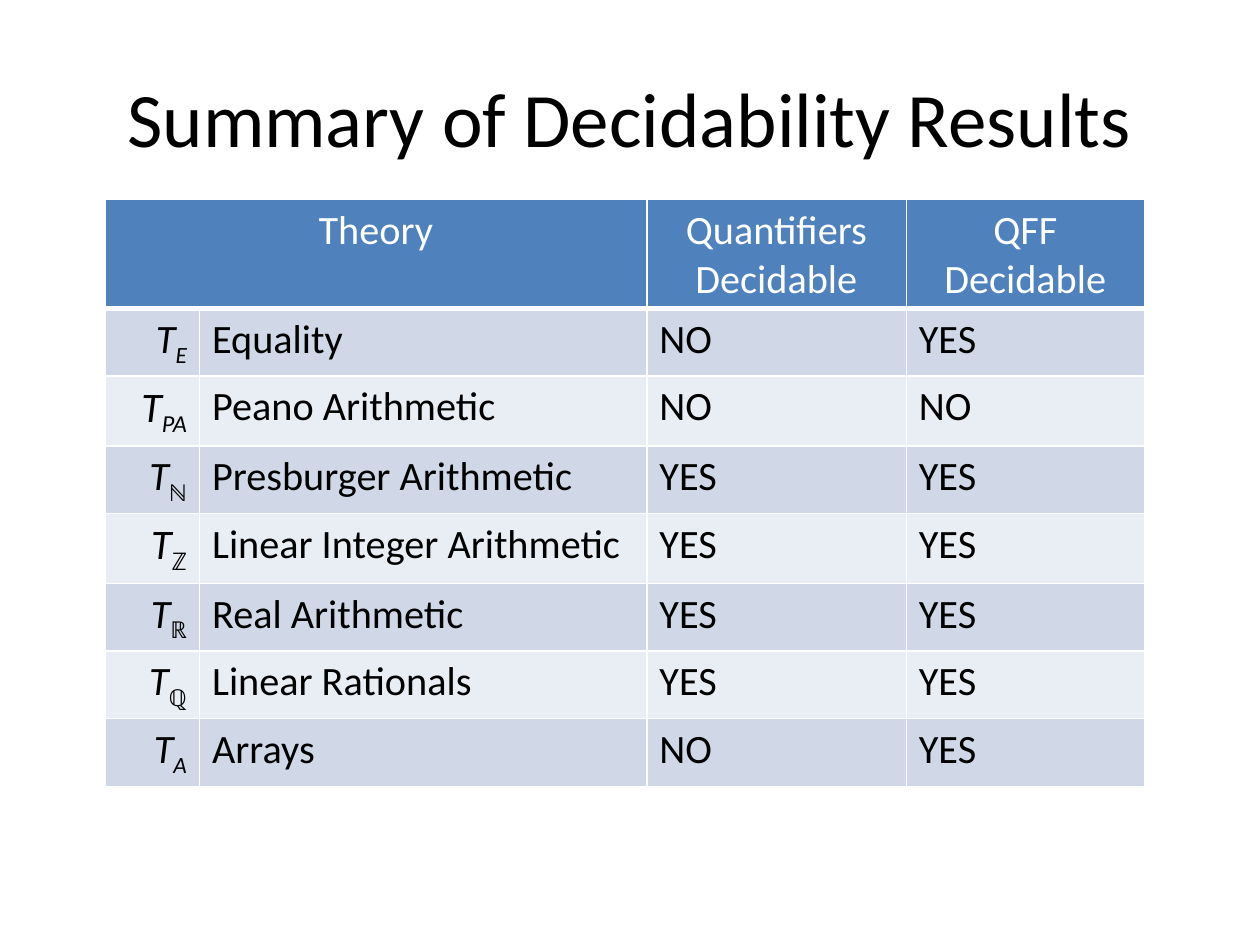
from lxml import etree
from pptx import Presentation, util as u
from pptx.dml.color import RGBColor
from pptx.enum import text
from pptx.oxml import ns

TITLE = "Summary of Decidability Results"
HEADINGS = ["Theory", None, "Quantifiers Decidable", "QFF Decidable"]
THEORIES = [
    ("E", True, 23, "Equality", "NO", "YES"),
    ("PA", True, 24, "Peano Arithmetic", "NO", "NO"),
    ("ℕ", False, 23, "Presburger Arithmetic", "YES", "YES"),
    ("ℤ", False, 24, "Linear Integer Arithmetic", "YES", "YES"),
    ("ℝ", False, 23, "Real Arithmetic", "YES", "YES"),
    ("ℚ", False, 23, "Linear Rationals", "YES", "YES"),
    ("A", True, 23, "Arrays", "NO", "YES"),
]
COLUMN_WIDTHS = [54, 255.6, 148.3, 136.1]
ROW_HEIGHT = 29.5


def colour(value):
    return RGBColor.from_string(value)


class SlideBuilder:
    """Holds the deck style and the current slide, and adds each kind of element."""

    font = "Calibri"
    ink, paper, header = "000000", "FFFFFF", "4F81BD"
    bands = ["D0D8E8", "E9EDF4"]
    body_size = 23

    def __init__(self, page):
        self.page = page

    def style(self, para, size, ink, align):
        para.alignment = align
        para.font.name = self.font
        para.font.size = u.Pt(size)
        para.font.bold = False
        para.font.color.rgb = colour(ink)

    def title(self, words, left, top, width, height):
        box = self.page.shapes.add_textbox(*map(u.Pt, (left, top, width, height)))
        frame = box.text_frame
        frame.word_wrap = True
        frame.vertical_anchor = text.MSO_ANCHOR.MIDDLE
        para = frame.paragraphs[0]
        para.text = words
        self.style(para, 44, self.ink, text.PP_ALIGN.CENTER)

    def table(self, left, top, widths, row_count):
        size = (left, top, sum(widths), ROW_HEIGHT * row_count)
        table = self.page.shapes.add_table(
            row_count, len(widths), *map(u.Pt, size)).table
        for column, width in zip(table.columns, widths):
            column.width = u.Pt(width)
        for row in table.rows:
            row.height = u.Pt(ROW_HEIGHT)
        return table

    def borders(self, cell, sides):
        properties = cell._tc.get_or_add_tcPr()
        for side, width in sides.items():
            line = etree.SubElement(properties, ns.qn(f"a:ln{side}"), w=str(u.Pt(width)))
            fill = etree.SubElement(line, ns.qn("a:solidFill"))
            etree.SubElement(fill, ns.qn("a:srgbClr"), val=self.paper)

    def cell(self, cell, words, fill, ink, align=text.PP_ALIGN.LEFT):
        cell.fill.solid()
        cell.fill.fore_color.rgb = colour(fill)
        para = cell.text_frame.paragraphs[0]
        para.text = words
        self.style(para, self.body_size, ink, align)

    def heading(self, cell, words):
        self.borders(cell, {"L": 1, "R": 1, "T": 1, "B": 3})
        self.cell(cell, words, self.header, self.paper, text.PP_ALIGN.CENTER)

    def symbol(self, cell, subscript, italic, size, fill):
        self.cell(cell, "T", fill, self.ink, text.PP_ALIGN.RIGHT)
        para = cell.text_frame.paragraphs[0]
        para.font.size = u.Pt(size)
        para.runs[0].font.italic = True
        span = para.add_run()
        span.text = subscript
        span.font.italic = italic
        span.font._element.set("baseline", "-25000")


def main():
    deck = Presentation()
    deck.slide_width, deck.slide_height = u.Pt(720), u.Pt(540)
    builder = SlideBuilder(deck.slides.add_slide(deck.slide_layouts[6]))
    builder.title(TITLE, 36, 21.6, 648, 90)

    table = builder.table(60, 114, COLUMN_WIDTHS, len(THEORIES) + 1)
    table.cell(0, 0).merge(table.cell(0, 1))
    for column, words in enumerate(HEADINGS):
        if words:
            builder.heading(table.cell(0, column), words)
    for row, (subscript, italic, size, *answers) in enumerate(THEORIES, 1):
        fill = builder.bands[(row - 1) % 2]
        builder.symbol(table.cell(row, 0), subscript, italic, size, fill)
        for column, words in enumerate(answers, 1):
            builder.cell(table.cell(row, column), words, fill, builder.ink)

    deck.save("out.pptx")


if __name__ == "__main__":
    main()
